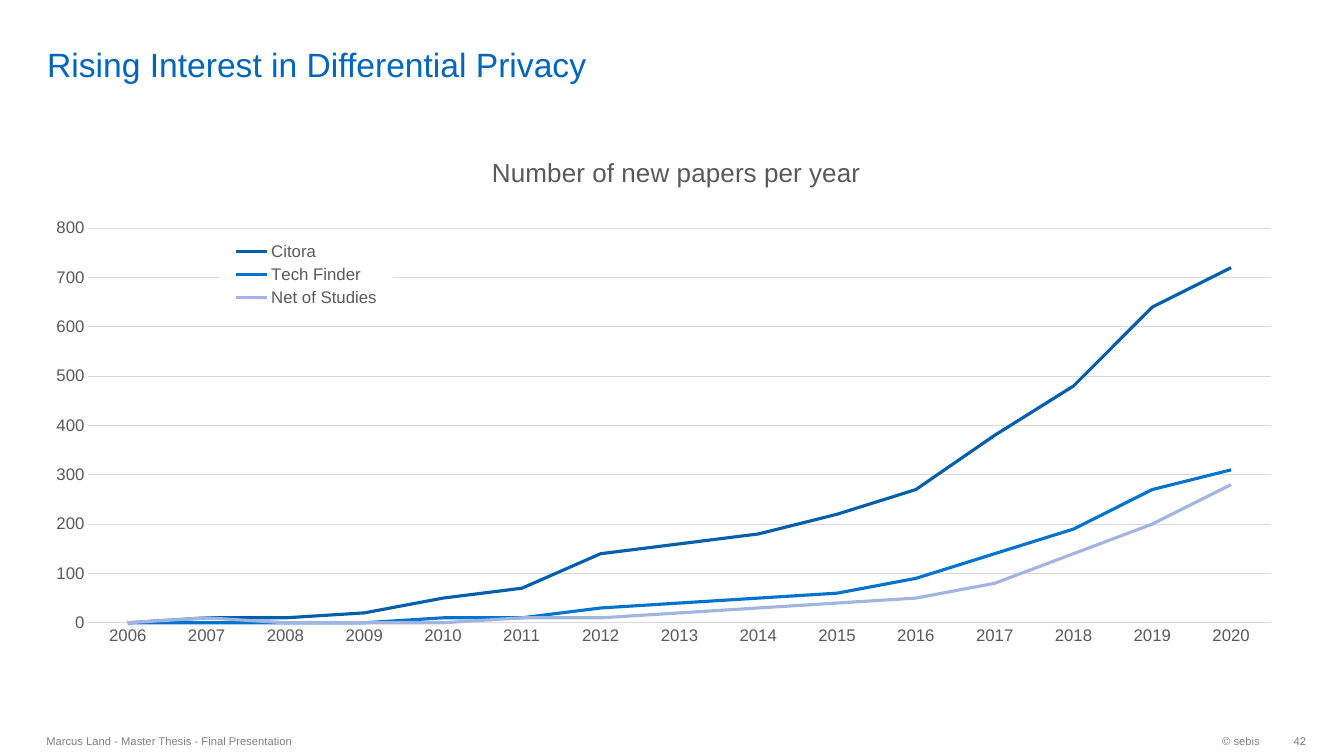
from dataclasses import dataclass
from lxml.etree import SubElement
from pptx import Presentation
from pptx.chart.data import CategoryChartData
from pptx.dml.color import RGBColor as RGB
from pptx.enum.chart import XL_CHART_TYPE as CHART, XL_LEGEND_POSITION as LEGEND, XL_TICK_MARK as TICK
from pptx.enum.text import MSO_ANCHOR as ANCHOR, MSO_AUTO_SIZE as FIT, PP_ALIGN as ALIGN
from pptx.oxml import parse_xml
from pptx.oxml.ns import nsdecls, qn
from pptx.util import Pt


@dataclass(frozen=True)
class Theme:
    font: str = "Arial"
    title: RGB = RGB(0x00, 0x65, 0xBD)
    label: RGB = RGB(0x59, 0x59, 0x59)
    rule: RGB = RGB(0xD9, 0xD9, 0xD9)
    footer: RGB = RGB(0x80, 0x80, 0x80)
    series: tuple = (RGB(0x00, 0x5F, 0xAC), RGB(0x00, 0x73, 0xCF), RGB(0xA2, 0xB5, 0xE1))
    title_size: float = 24
    chart_title_size: float = 18.6
    label_size: float = 12
    footer_size: float = 8


theme = Theme()


def style(font, size, color):
    font.name, font.size, font.bold = theme.font, Pt(size), False
    font.color.rgb = color


def place(element, **fractions):
    layout = element.find(qn("c:layout"))
    if layout is None:
        layout = parse_xml(f"<c:layout {nsdecls('c')}/>")
        overlay = element.find(qn("c:overlay"))
        if overlay is None:
            element.insert(0, layout)
        else:
            overlay.addprevious(layout)
    manual = SubElement(layout, qn("c:manualLayout"))
    if element.tag == qn("c:plotArea"):
        SubElement(manual, qn("c:layoutTarget")).set("val", "inner")
    for side in "xy":
        SubElement(manual, qn(f"c:{side}Mode")).set("val", "edge")
    for side, value in fractions.items():
        SubElement(manual, qn(f"c:{side}")).set("val", str(value))


prs = Presentation()
prs.slide_width, prs.slide_height = Pt(960), Pt(540)
s = prs.slides.add_slide(prs.slide_layouts[5])

title = s.shapes.title
title.left, title.top, title.width, title.height = Pt(26.5), Pt(3.5), Pt(834), Pt(57)
tf = title.text_frame
tf.auto_size, tf.word_wrap, tf.vertical_anchor = FIT.NONE, True, ANCHOR.BOTTOM
tf.margin_left = tf.margin_right = Pt(7.2)
tf.margin_top = tf.margin_bottom = 0
p = tf.paragraphs[0]
p.alignment = ALIGN.LEFT
r = p.add_run()
r.text = "Rising Interest in Differential Privacy"
style(r.font, theme.title_size, theme.title)

papers = {
    "Citora": (0, 10, 10, 20, 50, 70, 140, 160, 180, 220, 270, 380, 480, 640, 720),
    "Tech Finder": (0, 0, 0, 0, 10, 10, 30, 40, 50, 60, 90, 140, 190, 270, 310),
    "Net of Studies": (0, 10, 0, 0, 0, 10, 10, 20, 30, 40, 50, 80, 140, 200, 280),
}
data = CategoryChartData()
data.categories = [str(year) for year in range(2006, 2021)]
for name, counts in papers.items():
    data.add_series(name, counts)
chart = s.shapes.add_chart(CHART.LINE, Pt(26), Pt(93), Pt(907), Pt(391), data).chart
style(chart.font, theme.label_size, theme.label)
place(chart.plots[0]._element.getparent(), x=0.041, y=0.179, w=0.931, h=0.721)

chart.has_title = True
r = chart.chart_title.text_frame.paragraphs[0].add_run()
r.text = "Number of new papers per year"
style(r.font, theme.chart_title_size, theme.label)
place(chart.chart_title._element, x=0.355, y=0.037)

chart.has_legend = True
legend = chart.legend
legend.position, legend.include_in_layout = LEGEND.RIGHT, False
place(legend._element, x=0.144, y=0.197, w=0.137, h=0.134)
legend._element.find(qn("c:overlay")).addnext(parse_xml(
    f'<c:spPr {nsdecls("c", "a")}><a:solidFill><a:srgbClr val="FFFFFF"/></a:solidFill></c:spPr>'))
style(legend.font, theme.label_size, theme.label)

years, amounts = chart.category_axis, chart.value_axis
for axis in (years, amounts):
    axis.major_tick_mark = axis.minor_tick_mark = TICK.NONE
    style(axis.tick_labels.font, theme.label_size, theme.label)
amounts.minimum_scale, amounts.maximum_scale, amounts.major_unit = 0, 800, 100
amounts.has_major_gridlines = True
for line in (years.format.line, amounts.major_gridlines.format.line):
    line.width = Pt(0.75)
    line.color.rgb = theme.rule
amounts.format.line.fill.background()

plot = chart.plots[0]
plot.vary_by_categories = False
for series, color in zip(plot.series, theme.series):
    series.smooth = False
    series.format.line.width = Pt(2.25)
    series.format.line.color.rgb = color

footers = (
    ("© sebis", 739, 168, ALIGN.RIGHT, False, 7.2),
    ("Marcus Land - Master Thesis - Final Presentation", 26, 454, ALIGN.LEFT, True, 7.2),
    ("42", 907, 26, ALIGN.RIGHT, False, 0),
)
for text, left, width, align, wrap, margin in footers:
    tf = s.shapes.add_textbox(Pt(left), Pt(517.5), Pt(width), Pt(23)).text_frame
    tf.word_wrap, tf.vertical_anchor, tf.margin_right = wrap, ANCHOR.MIDDLE, Pt(margin)
    p = tf.paragraphs[0]
    p.alignment = align
    r = p.add_run()
    r.text = text
    style(r.font, theme.footer_size, theme.footer)

prs.save("out.pptx")
